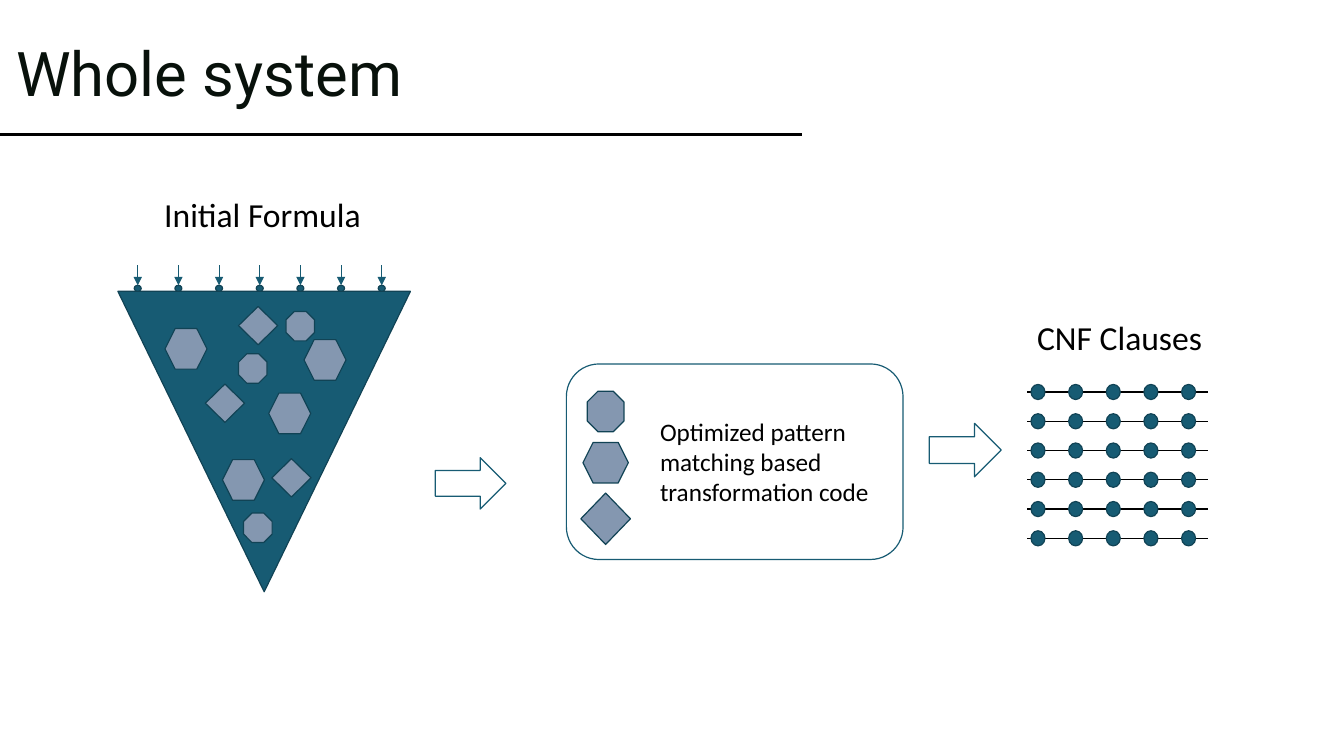
from lxml.etree import SubElement
from pptx import Presentation
from pptx.dml.color import RGBColor
from pptx.enum.shapes import MSO_CONNECTOR, MSO_SHAPE
from pptx.enum.text import MSO_ANCHOR, PP_ALIGN
from pptx.oxml.ns import qn
from pptx.util import Pt

TEAL = RGBColor(0x17, 0x5B, 0x73)
DARK_TEAL = RGBColor(0x11, 0x43, 0x55)
SLATE = RGBColor(0x84, 0x97, 0xB0)
INK = RGBColor(0x08, 0x11, 0x0B)
BLACK = RGBColor(0, 0, 0)
WHITE = RGBColor(0xFF, 0xFF, 0xFF)


def add_figure(shapes, kind, left, top, width, height, fill, outline=DARK_TEAL):
    figure = shapes.add_shape(kind, Pt(left), Pt(top), Pt(width), Pt(height))
    figure.shadow.inherit = False
    figure.fill.solid()
    figure.fill.fore_color.rgb = fill
    figure.line.color.rgb = outline
    figure.line.width = Pt(0.85)
    return figure


def add_line(shapes, x1, y1, x2, y2, color, weight, arrow=False):
    line = shapes.add_connector(
        MSO_CONNECTOR.STRAIGHT, Pt(x1), Pt(y1), Pt(x2), Pt(y2))
    line.line.color.rgb = color
    line.line.width = Pt(weight)
    properties = line._element.spPr
    if arrow:
        SubElement(properties.find(qn("a:ln")), qn("a:tailEnd"), type="triangle")
    SubElement(properties, qn("a:effectLst"))
    return line


def write_run(paragraph, text, size, font, color):
    run = paragraph.add_run()
    run.text = text
    run.font.size = Pt(size)
    run.font.name = font
    run.font.color.rgb = color


def add_label(shapes, left, top, width, height, text, size, wrap=True):
    label = shapes.add_textbox(Pt(left), Pt(top), Pt(width), Pt(height))
    label.text_frame.word_wrap = wrap
    write_run(label.text_frame.paragraphs[0], text, size, "Calibri", BLACK)


def build_heading(slide, left, top, width, height):
    heading = slide.shapes.title
    heading.left, heading.top = Pt(left), Pt(top)
    heading.width, heading.height = Pt(width), Pt(height)
    heading.text_frame.vertical_anchor = MSO_ANCHOR.MIDDLE
    paragraph = heading.text_frame.paragraphs[0]
    paragraph.alignment = PP_ALIGN.LEFT
    paragraph.line_spacing = 0.9
    write_run(paragraph, "Whole system", 44, "Roboto", INK)
    # Rule under the heading, from the slide edge
    add_line(slide.shapes, 0, 96, 573, 96, BLACK, 2.25)


def build_formula_funnel(slide, left, top, width, height):
    add_label(slide.shapes, left + 26, top - 73, 224, 36, "Initial Formula", 24)
    funnel = slide.shapes.add_group_shape().shapes
    body = add_figure(funnel, MSO_SHAPE.ISOSCELES_TRIANGLE,
                      left, top, width, height, TEAL)
    body.rotation = 180

    # Inputs entering along the top edge
    for i in range(7):
        x = left + 14.2 + i * 29.05
        inlet = add_figure(funnel, MSO_SHAPE.OVAL, x - 2.5, top - 4.3, 5, 4.3, TEAL)
        arrow = add_line(funnel, x, top - 18.5, x, top - 4.3, TEAL, 0.75, arrow=True)
        arrow.end_connect(inlet, 0)

    # Patterns scattered inside: kind, width, height, offsets
    patterns = [
        (MSO_SHAPE.HEXAGON, 30, 29,
         [(33.7, 26.6), (107.8, 72.7), (74.7, 120.2), (133, 34.5)]),
        (MSO_SHAPE.DIAMOND, 28, 27.4,
         [(86.2, 10.8), (110, 119.5), (62.5, 66.2)]),
        (MSO_SHAPE.OCTAGON, 20.4, 21,
         [(86.2, 44.6), (120.1, 14.4), (89.8, 158.4)]),
    ]
    for kind, pattern_width, pattern_height, offsets in patterns:
        for dx, dy in offsets:
            add_figure(funnel, kind, left + dx, top + dy,
                       pattern_width, pattern_height, SLATE)


def build_matching_box(slide, left, top, width, height):
    add_figure(slide.shapes, MSO_SHAPE.ROUNDED_RECTANGLE,
               left, top, width, height, WHITE, TEAL)
    # Recognised patterns, centred in one column
    column = left + 28
    for kind, dy, pattern_width, pattern_height in [
            (MSO_SHAPE.OCTAGON, 19.4, 26.2, 29),
            (MSO_SHAPE.HEXAGON, 56, 32.4, 29),
            (MSO_SHAPE.DIAMOND, 92.2, 35.4, 36.7)]:
        add_figure(slide.shapes, kind, column - pattern_width / 2, top + dy,
                   pattern_width, pattern_height, SLATE)
    add_label(slide.shapes, left + 59.8, top + 33.8, 172.8, 72.7,
              "Optimized pattern matching based transformation code", 18)


def build_clauses(slide, left, top, width, height):
    add_label(slide.shapes, left, top - 57.5, 133, 36, "CNF Clauses", 24, wrap=False)
    rows, literals = 6, 5
    for row in range(rows):
        clause = slide.shapes.add_group_shape().shapes
        y = top + row * height / (rows - 1)
        add_line(clause, left, y, left + width, y, BLACK, 0.85)
        for i in range(literals):
            add_figure(clause, MSO_SHAPE.OVAL,
                       left + 2.7 + i * 26.9, y - 5.4, 10, 10.8, TEAL)


def build_flow_arrow(slide, left, top, width, height):
    add_figure(slide.shapes, MSO_SHAPE.RIGHT_ARROW,
               left, top, width, height, WHITE, TEAL)


def main():
    deck = Presentation()
    deck.slide_width, deck.slide_height = Pt(960), Pt(540)
    slide = deck.slides.add_slide(deck.slide_layouts[5])
    build_heading(slide, 4.3, 2.2, 540.7, 104.4)
    build_formula_funnel(slide, 84.2, 208.1, 209, 214.6)
    build_flow_arrow(slide, 311, 326.9, 50.4, 36.7)
    build_matching_box(slide, 404.6, 260, 240.5, 139.7)
    build_flow_arrow(slide, 663.8, 302.4, 51.4, 38.2)
    build_clauses(slide, 733.7, 280, 129, 104.5)
    deck.save("out.pptx")


if __name__ == "__main__":
    main()
